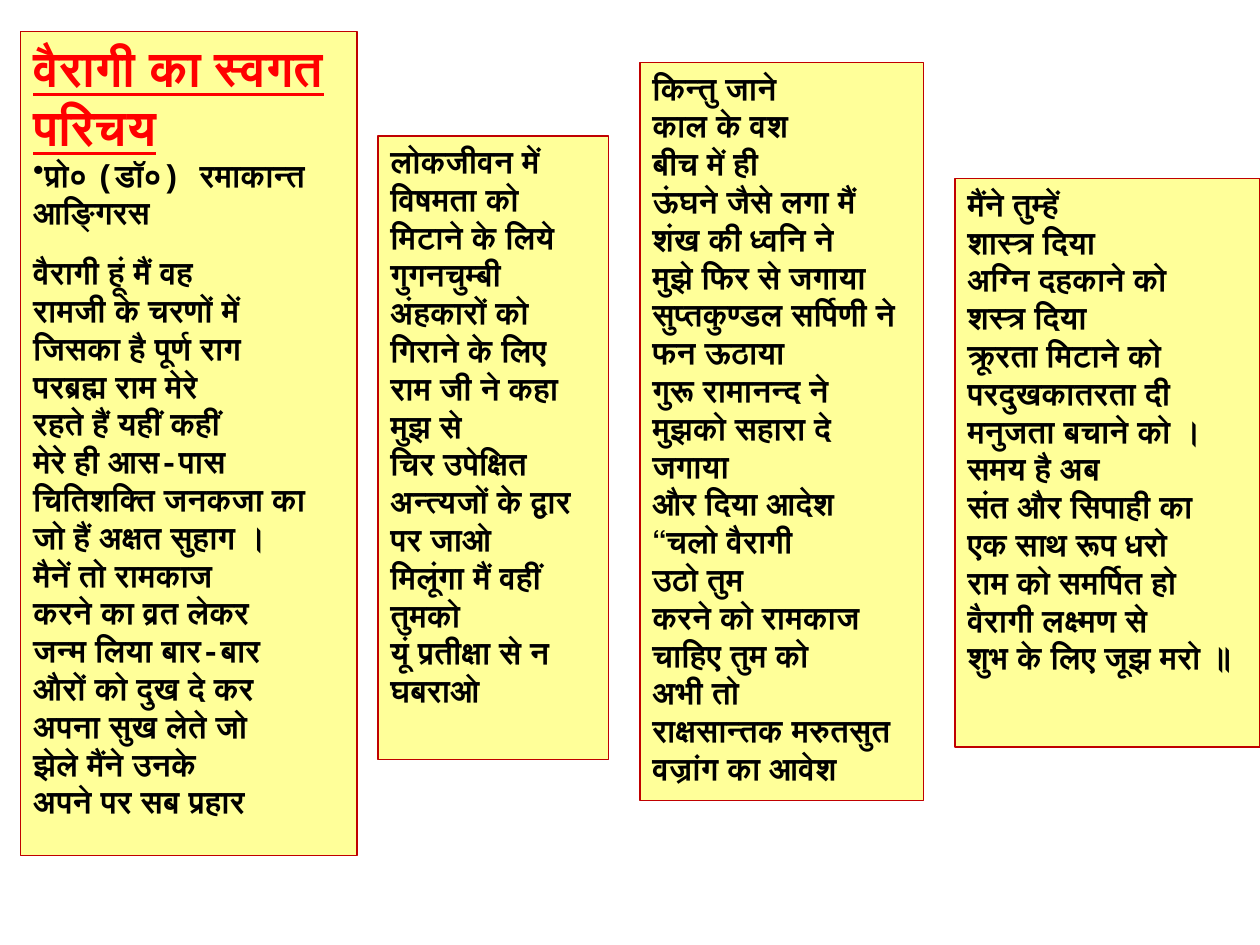
from lxml import etree
from pptx import Presentation
from pptx.dml.color import RGBColor
from pptx.oxml.ns import qn
from pptx.util import Cm, Pt

FONT = "Courier New"
COLORS = {"paper": "FFFF99", "border": "C00000", "heading": "FF0000", "verse": "000000"}

HEADING = "वैरागी का स्वगत परिचय"
POET = "प्रो० (डॉ०) रमाकान्त आङ्गिरस"
FIRST_VERSE = "वैरागी हूं मैं वह"

# left, top, width, height in cm, then the lines
columns = [
    (0.42, 0.64, 6.78, 16.61, [
        HEADING,
        POET,
        FIRST_VERSE,
        "रामजी के चरणों में",
        "जिसका है पूर्ण राग",
        "परब्रह्म राम मेरे",
        "रहते हैं यहीं कहीं",
        "मेरे ही आस-पास",
        "चितिशक्ति जनकजा का",
        "जो हैं अक्षत सुहाग ।",
        "मैनें तो रामकाज",
        "करने का व्रत लेकर",
        "जन्म लिया बार-बार",
        "औरों को दुख दे कर",
        "अपना सुख लेते जो",
        "झेले मैंने उनके",
        "अपने पर सब प्रहार",
    ]),
    (7.62, 2.74, 4.65, 12.57, [
        "लोकजीवन में",
        "विषमता को मिटाने के लिये",
        "गुगनचुम्बी अंहकारों को",
        "गिराने के लिए",
        "राम जी ने कहा मुझ से",
        "चिर उपेक्षित",
        "अन्त्यजों के द्वार पर जाओ",
        "मिलूंगा मैं वहीं तुमको",
        "यूं प्रतीक्षा से न घबराओ",
    ]),
    (12.9, 1.26, 5.72, 14.88, [
        "किन्तु जाने",
        "काल के वश",
        "बीच में ही",
        "ऊंघने जैसे लगा मैं",
        "शंख की ध्वनि ने",
        "मुझे फिर से जगाया",
        "सुप्तकुण्डल सर्पिणी ने",
        "फन ऊठाया",
        "गुरू रामानन्द ने",
        "मुझको सहारा दे",
        "जगाया",
        "और दिया आदेश",
        "“चलो वैरागी",
        "उठो तुम",
        "करने को रामकाज",
        "चाहिए तुम को",
        "अभी तो",
        "राक्षसान्तक मरुतसुत",
        "वज्रांग का आवेश",
    ]),
    (19.25, 3.6, 6.15, 11.46, [
        "मैंने तुम्हें",
        "शास्त्र दिया",
        "अग्नि दहकाने को",
        "शस्त्र दिया",
        "क्रूरता मिटाने को",
        "परदुखकातरता दी",
        "मनुजता बचाने को ।",
        "समय है अब",
        "संत और सिपाही का",
        "एक साथ रूप धरो",
        "राम को समर्पित हो",
        "वैरागी लक्ष्मण से",
        "शुभ के लिए जूझ मरो ॥",
    ]),
]

prs = Presentation()
prs.slide_width, prs.slide_height = Cm(25.4), Cm(19.05)
slide = prs.slides.add_slide(prs.slide_layouts[6])

for left, top, width, height, lines in columns:
    column = slide.shapes.add_textbox(Cm(left), Cm(top), Cm(width), Cm(height))
    column.fill.solid()
    column.fill.fore_color.rgb = RGBColor.from_string(COLORS["paper"])
    column.line.color.rgb = RGBColor.from_string(COLORS["border"])
    column.line.width = Pt(0.75)
    frame = column.text_frame
    frame.word_wrap = True
    frame.text = "\n".join(lines)

    for verse in frame.paragraphs:
        is_heading = verse.text == HEADING
        font = verse.font
        font.name = FONT
        font.size = Pt(28 if is_heading else 18)
        font.bold = True
        font.underline = is_heading
        font.color.rgb = RGBColor.from_string(COLORS["heading" if is_heading else "verse"])

        if verse.text == POET:
            bullet = etree.Element(qn("a:buChar"), char="•")
            verse._p.pPr.insert(0, bullet)
        elif verse.text == FIRST_VERSE:
            verse.space_before = Pt(12.6)

prs.save("out.pptx")
